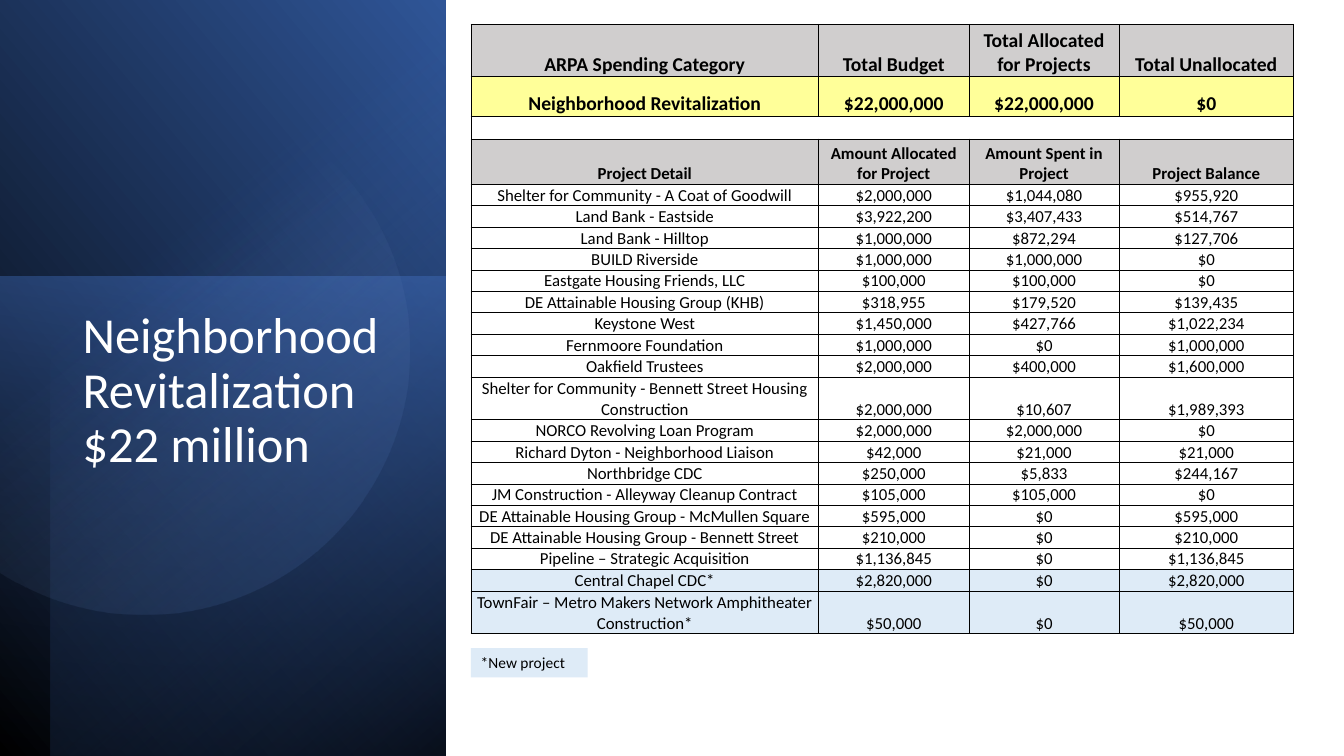
from math import acos, cos, sin

from lxml.etree import SubElement
from pptx import Presentation
from pptx.dml.color import RGBColor
from pptx.enum.shapes import MSO_SHAPE as Shape
from pptx.enum.text import MSO_ANCHOR as Anchor, PP_ALIGN as Align
from pptx.oxml.ns import qn
from pptx.util import Inches, Pt

FONT = "Calibri"
GRAY, YELLOW, PALE = "D0CECE", "FFFF99", "DEEBF7"
TITLE = "Neighborhood Revitalization $22 million"
NOTE = "*New project"

BUDGET = ("ARPA Spending Category", "Total Budget",
          "Total Allocated for Projects", "Total Unallocated")
TOTAL = ("Neighborhood Revitalization", 22000000, 22000000)
DETAIL = ("Project Detail", "Amount Allocated for Project",
          "Amount Spent in Project", "Project Balance")
# Project, allocated, spent; a star marks a new project
PROJECTS = [
    ("Shelter for Community - A Coat of Goodwill", 2000000, 1044080),
    ("Land Bank - Eastside", 3922200, 3407433),
    ("Land Bank - Hilltop", 1000000, 872294),
    ("BUILD Riverside", 1000000, 1000000),
    ("Eastgate Housing Friends, LLC", 100000, 100000),
    ("DE Attainable Housing Group (KHB)", 318955, 179520),
    ("Keystone West", 1450000, 427766),
    ("Fernmoore Foundation", 1000000, 0),
    ("Oakfield Trustees", 2000000, 400000),
    ("Shelter for Community - Bennett Street Housing Construction",
     2000000, 10607),
    ("NORCO Revolving Loan Program", 2000000, 2000000),
    ("Richard Dyton - Neighborhood Liaison", 42000, 21000),
    ("Northbridge CDC", 250000, 5833),
    ("JM Construction - Alleyway Cleanup Contract", 105000, 105000),
    ("DE Attainable Housing Group - McMullen Square", 595000, 0),
    ("DE Attainable Housing Group - Bennett Street", 210000, 0),
    ("Pipeline – Strategic Acquisition", 1136845, 0),
    ("Central Chapel CDC*", 2820000, 0),
    ("TownFair – Metro Makers Network Amphitheater Construction*",
     50000, 0),
]
COLS = (3.45, 1.49, 1.49, 1.73)
LONG = 50  # letters that force a second line
LINE = 4.46 / 21  # height of the project rows over their lines of text

# Box, turn, flip, gradient angle, stops of (place, color, opacity)
PANELS = [
    ((-1.55, 1.55, 7.52, 4.42), 90, True, 310,
     [(0, "000000", 100), (100, "2F5597", 100)]),
    ((-0.17, 2.91, 4.76, 4.42), 270, False, 190,
     [(0, "4472C4", 50), (100, "203864", 0)]),
    ((-1.29, 1.79, 7.5, 3.92), 270, True, 220,
     [(0, "000000", 59), (69, "4472C4", 0)]),
]
DISC = (1.43, 3.47, 2.63)  # center x, center y, radius
GLOW = [(39, "8FAADC", 0), (100, "2F5597", 26)]


def color(hex):
    return RGBColor.from_string(hex)


def blend(shape, angle, stops):
    """Give a shape a linear gradient with opacity, and no line or shadow."""
    shape.shadow.inherit = False
    shape.line.fill.background()
    shape.fill.gradient()
    grad = shape.element.spPr.find(qn("a:gradFill"))
    for part in list(grad):
        grad.remove(part)
    grad.set("rotWithShape", "1")
    group = SubElement(grad, qn("a:gsLst"))
    for place, hex, alpha in stops:
        stop = SubElement(group, qn("a:gs"), pos=str(place * 1000))
        tint = SubElement(stop, qn("a:srgbClr"), val=hex)
        SubElement(tint, qn("a:alpha"), val=str(alpha * 1000))
    SubElement(grad, qn("a:lin"), ang=str(round(angle * 60000)), scaled="0")


def write(frame, text, size, hex="000000", bold=False, align=Align.LEFT):
    frame.word_wrap = True
    frame.text = text
    par = frame.paragraphs[0]
    par.alignment = align
    for run in par.runs:
        font = run.font
        font.name, font.size, font.bold = FONT, Pt(size), bold
        font.color.rgb = color(hex)
    if not text:
        SubElement(par._p, qn("a:endParaRPr"), sz=str(size * 100))
    return par


def border(cell):
    props = cell._tc.get_or_add_tcPr()
    for side in ("a:lnL", "a:lnR", "a:lnT", "a:lnB"):
        line = SubElement(props, qn(side), w=str(Pt(0.5)))
        fill = SubElement(line, qn("a:solidFill"))
        SubElement(fill, qn("a:srgbClr"), val="000000")


def money(name, given, used):
    return (name, *(f"${n:,}" for n in (given, used, given - used)))


def plan():
    """List each table row as texts, height, size, bold and fill."""
    rows = [
        (BUDGET, 0.52, 14, True, GRAY),
        (money(*TOTAL), 0.39, 14, True, YELLOW),
        ([""] * len(COLS), 0.23, 12, False, None),
        (DETAIL, 0.45, 12, True, GRAY),
    ]
    for item in PROJECTS:
        name = item[0]
        high = LINE * (2 if len(name) > LONG else 1)
        fill = PALE if name.endswith("*") else None
        rows.append((money(*item), high, 12, False, fill))
    return rows


def draw_panels(shapes):
    for box, turn, flip, angle, stops in PANELS:
        panel = shapes.add_shape(Shape.RECTANGLE, *map(Inches, box))
        panel.rotation = turn
        if flip:
            panel.element.spPr.find(qn("a:xfrm")).set("flipH", "1")
        blend(panel, angle, stops)


def draw_disc(shapes):
    """Draw the disc, cut off at the left edge of the slide."""
    x, y, r = DISC
    end = acos(-x / r)
    steps = 120
    turns = [end * (2 * i / steps - 1) for i in range(steps + 1)]
    dots = [(Inches(x + r * cos(t)), Inches(y + r * sin(t))) for t in turns]
    path = shapes.build_freeform(*dots[0])
    path.add_line_segments(dots[1:], close=True)
    blend(path.convert_to_shape(), 51.6, GLOW)


def draw_table(shapes):
    rows = plan()
    high = sum(row[1] for row in rows)
    box = map(Inches, (4.67, 0.24, sum(COLS), high))
    table = shapes.add_table(len(rows), len(COLS), *box).table
    table.first_row = table.horz_banding = False
    for col, wide in zip(table.columns, COLS):
        col.width = Inches(wide)
    for r, (texts, high, size, bold, fill) in enumerate(rows):
        table.rows[r].height = Inches(high)
        gap = Inches(0.01 if r else 0.02)
        for c, text in enumerate(texts):
            cell = table.cell(r, c)
            write(cell.text_frame, text, size, bold=bold, align=Align.CENTER)
            cell.margin_left = cell.margin_right = cell.margin_top = gap
            cell.margin_bottom = 0
            cell.vertical_anchor = Anchor.BOTTOM
            border(cell)
            if fill:
                cell.fill.solid()
                cell.fill.fore_color.rgb = color(fill)
            else:
                cell.fill.background()
        if not any(texts):
            table.cell(r, 0).merge(table.cell(r, len(COLS) - 1))


def draw_note(shapes):
    box = map(Inches, (4.67, 6.43, 1.16, 0.29))
    note = shapes.add_shape(Shape.RECTANGLE, *box)
    note.shadow.inherit = False
    note.line.fill.background()
    note.fill.solid()
    note.fill.fore_color.rgb = color(PALE)
    write(note.text_frame, NOTE, 11)


def main():
    deck = Presentation()
    deck.slide_width, deck.slide_height = Inches(13.33), Inches(7.5)
    shapes = deck.slides.add_slide(deck.slide_layouts[6]).shapes
    draw_panels(shapes)
    draw_disc(shapes)
    title = shapes.add_textbox(*map(Inches, (0.72, 3.03, 3.15, 3.36)))
    write(title.text_frame, TITLE, 36, "FFFFFF").line_spacing = 0.9
    draw_table(shapes)
    draw_note(shapes)
    deck.save("out.pptx")


if __name__ == "__main__":
    main()
